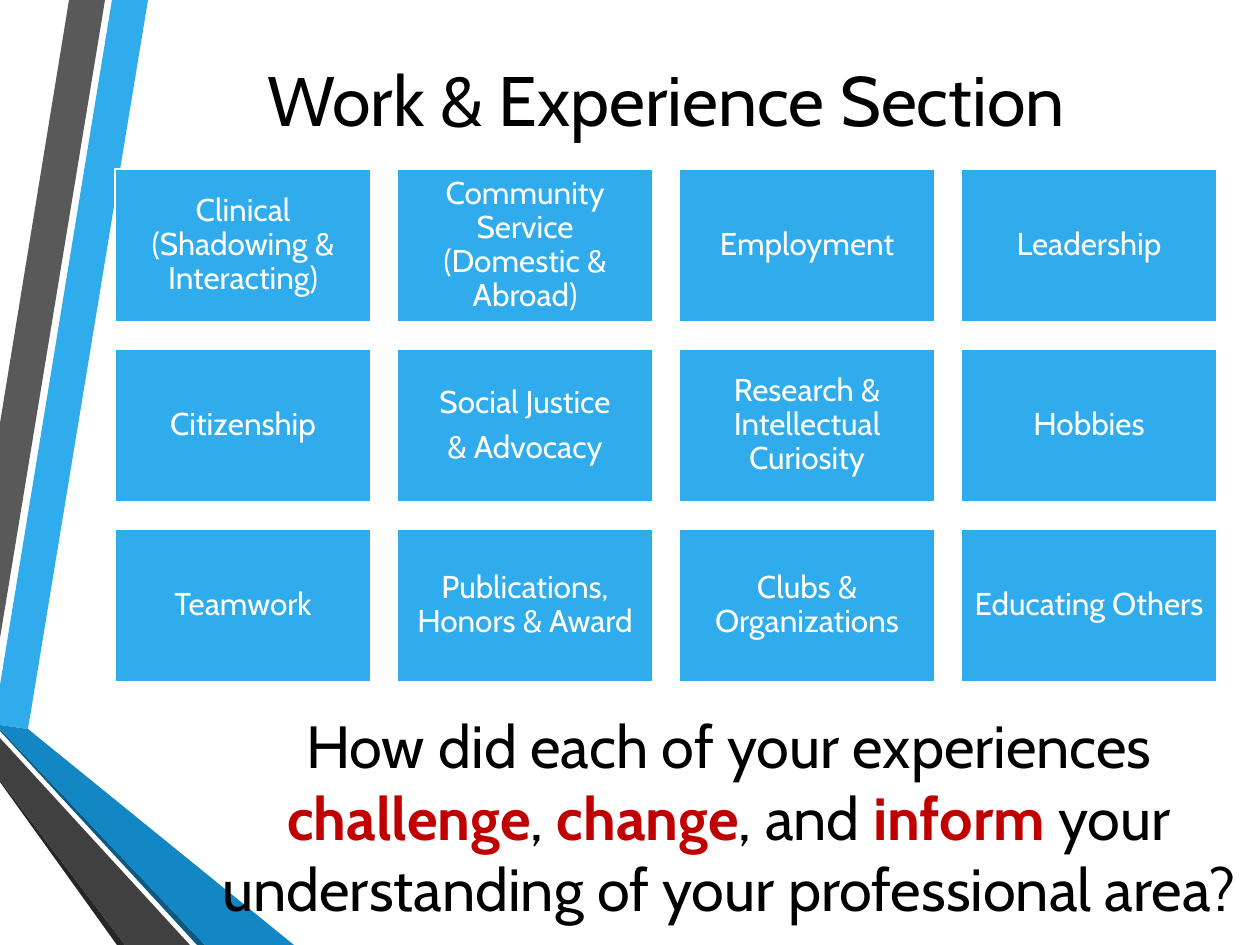
from typing import NamedTuple

from pptx import Presentation
from pptx import util as u
from pptx.dml.color import RGBColor
from pptx.enum import shapes, text

PX = 914400 / 126
FONT = "Cabin"
BLACK, WHITE, BLUE, RED = "000000", "FFFFFF", "30ACEC", "C00000"


class Band(NamedTuple):
    color: str
    points: list[tuple[int, int]]


class Tile(NamedTuple):
    label: str
    col: int
    row: int


class Span(NamedTuple):
    words: str
    key: bool = False


BANDS = [
    Band(BLUE, [(0, 685), (0, 725), (28, 729), (148, 0), (112, 0)]),
    Band("595959", [(105, 0), (69, 0), (0, 423), (0, 638)]),
    Band("262626", [(0, 780), (0, 782), (117, 945), (125, 945)]),
    Band("0C5A82", [(0, 729), (0, 731), (197, 945), (205, 945)]),
    Band("1287C3", [(0, 729), (205, 945), (294, 945), (28, 729), (0, 725)]),
    Band("404040", [(0, 780), (125, 945), (190, 945), (0, 738)]),
]
LABELS = [
    "Clinical (Shadowing & Interacting)",
    "Community Service (Domestic & Abroad)",
    "Employment",
    "Leadership",
    "Citizenship",
    "Social Justice\n& Advocacy",
    "Research & Intellectual Curiosity",
    "Hobbies",
    "Teamwork",
    "Publications, Honors & Award",
    "Clubs & Organizations",
    "Educating Others",
]
COLS = 4
TILES = [Tile(label, n % COLS, n // COLS) for n, label in enumerate(LABELS)]
SPANS = [
    Span("How did each of your experiences "),
    Span("challenge", True),
    Span(", "),
    Span("change", True),
    Span(", and "),
    Span("inform ", True),
    Span("your understanding of your professional area?"),
]


def px(n: int) -> int:
    return round(n * PX)


def rgb(code: str) -> RGBColor:
    return RGBColor.from_string(code)


def style(run, size: int, color: str, bold: bool = False) -> None:
    run.font.name = FONT
    run.font.size = u.Pt(size)
    run.font.bold = bold
    run.font.color.rgb = rgb(color)


def frame(tf, left: int, top: int, right: int, base: int) -> None:
    tf.word_wrap = True
    tf.auto_size = text.MSO_AUTO_SIZE.NONE
    tf.vertical_anchor = text.MSO_ANCHOR.MIDDLE
    tf.margin_left, tf.margin_top = px(left), px(top)
    tf.margin_right, tf.margin_bottom = px(right), px(base)
    for para in tf.paragraphs:
        para.alignment = text.PP_ALIGN.CENTER


def draw_band(slide, band: Band) -> None:
    pen = slide.shapes.build_freeform(*band.points[0], scale=PX)
    pen.add_line_segments(band.points[1:], close=True)
    shape = pen.convert_to_shape()
    shape.shadow.inherit = False
    shape.fill.solid()
    shape.fill.fore_color.rgb = rgb(band.color)
    shape.line.fill.background()


def draw_tile(slide, tile: Tile) -> None:
    shape = slide.shapes.add_shape(
        shapes.MSO_SHAPE.RECTANGLE,
        px(115 + 282 * tile.col), px(169 + 180 * tile.row), px(256), px(153),
    )
    shape.shadow.inherit = False
    shape.fill.solid()
    shape.fill.fore_color.rgb = rgb(BLUE)
    shape.line.color.rgb = rgb(WHITE)
    shape.line.width = u.Pt(1.25)
    shape.text_frame.text = tile.label
    frame(shape.text_frame, 9, 9, 9, 9)
    for para in shape.text_frame.paragraphs:
        para.line_spacing = 0.9
        para.space_after = u.Pt(6.3)
        style(para.runs[0], 18, WHITE)


def draw_title(slide) -> None:
    title = slide.shapes.title
    title.left, title.top = px(135), px(1)
    title.width, title.height = px(1062), px(273)
    title.text_frame.text = "Work & Experience Section"
    frame(title.text_frame, 13, 6, 13, 84)
    style(title.text_frame.paragraphs[0].runs[0], 40, BLACK)


def draw_ask(slide) -> None:
    box = slide.shapes.add_textbox(px(198), px(713), px(1062), px(273))
    para = box.text_frame.paragraphs[0]
    for span in SPANS:
        run = para.add_run()
        run.text = span.words
        style(run, 34, RED if span.key else BLACK, span.key)
    frame(box.text_frame, 13, 6, 13, 72)


def main() -> None:
    deck = Presentation()
    deck.slide_width, deck.slide_height = px(1260), px(945)
    slide = deck.slides.add_slide(deck.slide_layouts[5])
    for band in BANDS:
        draw_band(slide, band)
    draw_title(slide)
    for tile in TILES:
        draw_tile(slide, tile)
    draw_ask(slide)
    deck.save("out.pptx")


if __name__ == "__main__":
    main()
